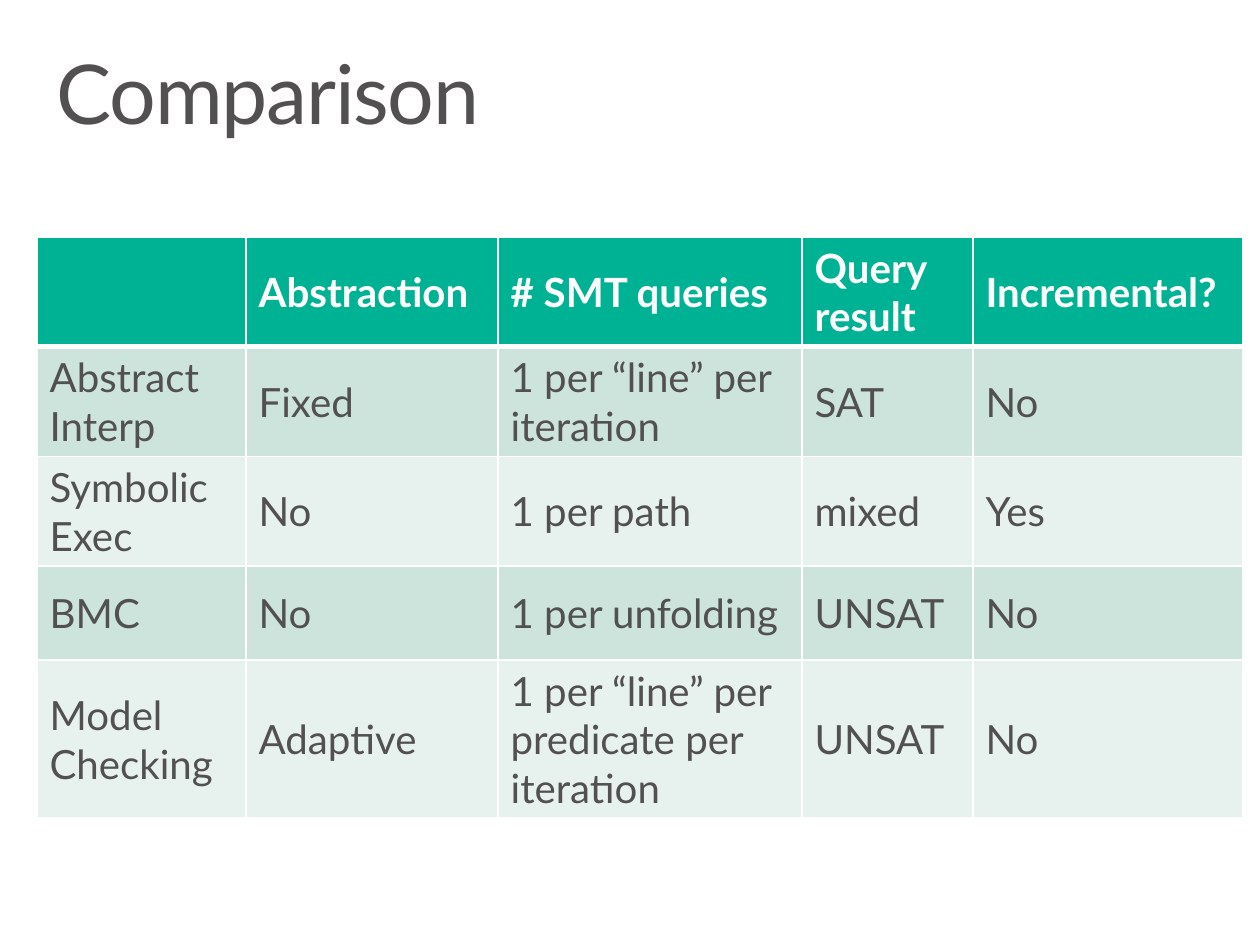
from lxml import etree
from pptx import Presentation, util as u
from pptx.dml.color import RGBColor
from pptx.enum import text
from pptx.oxml.ns import qn

COLORS = {"text": "525051", "white": "FFFFFF", "header": "00B294",
          "odd": "CCE4DC", "even": "E7F2EE"}
FONT = "Lato"
COLUMNS = [209, 252, 304, 171, 270]
ROW_HEIGHTS = [94, 94, 94, 94, 127]
ROWS = [
    ["", "Abstraction", "# SMT queries", "Query result", "Incremental?"],
    ["Abstract Interp", "Fixed", "1 per “line” per iteration", "SAT", "No"],
    ["Symbolic Exec", "No", "1 per path", "mixed", "Yes"],
    ["BMC", "No", "1 per unfolding", "UNSAT", "No"],
    ["Model Checking", "Adaptive", "1 per “line” per predicate per iteration",
     "UNSAT", "No"],
]


def px(n):
    """Convert pixels, 126 to the inch, to EMU."""
    return u.Emu(round(n * 914400 / 126))


def rgb(name):
    """Look up a palette colour."""
    return RGBColor.from_string(COLORS[name])


def style(p, size, color, bold=False):
    """Set the font of a whole paragraph."""
    p.font.name, p.font.size, p.font.bold = FONT, u.Pt(size), bold
    p.font.color.rgb = rgb(color)


def add_title(s, words, x, y, w, h):
    """Place the title placeholder in the given box."""
    sp = s.shapes.title
    sp.left, sp.top, sp.width, sp.height = map(px, (x, y, w, h))
    tf = sp.text_frame
    tf.text = words
    tf.word_wrap = True
    tf.auto_size = text.MSO_AUTO_SIZE.NONE
    tf.vertical_anchor = text.MSO_ANCHOR.TOP
    tf.margin_left = tf.margin_right = px(20)
    tf.margin_top = tf.margin_bottom = px(13)
    p = tf.paragraphs[0]
    p.alignment = text.PP_ALIGN.LEFT
    p.line_spacing = 0.9
    style(p, 47.1, "text")
    p.runs[0].font._element.set("spc", "-80")


def add_borders(cell, bottom, top):
    """Draw white cell borders, with the given bottom and top widths in points."""
    tcPr = cell._tc.get_or_add_tcPr()
    for side, width in (("L", 1), ("R", 1), ("T", top), ("B", bottom)):
        ln = etree.SubElement(tcPr, qn(f"a:ln{side}"), w=str(u.Pt(width)))
        fill = etree.SubElement(ln, qn("a:solidFill"))
        etree.SubElement(fill, qn("a:srgbClr"), val=COLORS["white"])


def add_comparison(s, x, y):
    """Place the comparison table with its top left corner at x, y."""
    frame = s.shapes.add_table(len(ROWS), len(COLUMNS), px(x), px(y),
                               px(sum(COLUMNS)), px(sum(ROW_HEIGHTS)))
    table = frame.table
    for column, width in zip(table.columns, COLUMNS):
        column.width = px(width)
    for i, (row, height) in enumerate(zip(ROWS, ROW_HEIGHTS)):
        table.rows[i].height = px(height)
        header = i == 0
        fill = "header" if header else "odd" if i % 2 else "even"
        for j, words in enumerate(row):
            cell = table.cell(i, j)
            cell.text = words
            cell.vertical_anchor = text.MSO_ANCHOR.MIDDLE
            style(cell.text_frame.paragraphs[0], 23,
                  "white" if header else "text", header)
            add_borders(cell, 3 if header else 1, 3 if i == 1 else 1)
            cell.fill.solid()
            cell.fill.fore_color.rgb = rgb(fill)


def main():
    """Build the slide and save it."""
    prs = Presentation()
    prs.slide_width, prs.slide_height = px(1260), px(945)
    s = prs.slides.add_slide(prs.slide_layouts[5])
    s.background.fill.solid()
    s.background.fill.fore_color.rgb = rgb("white")
    add_title(s, "Comparison", 37, 40, 1186, 124)
    add_comparison(s, 37, 237)
    prs.save("out.pptx")


if __name__ == "__main__":
    main()
